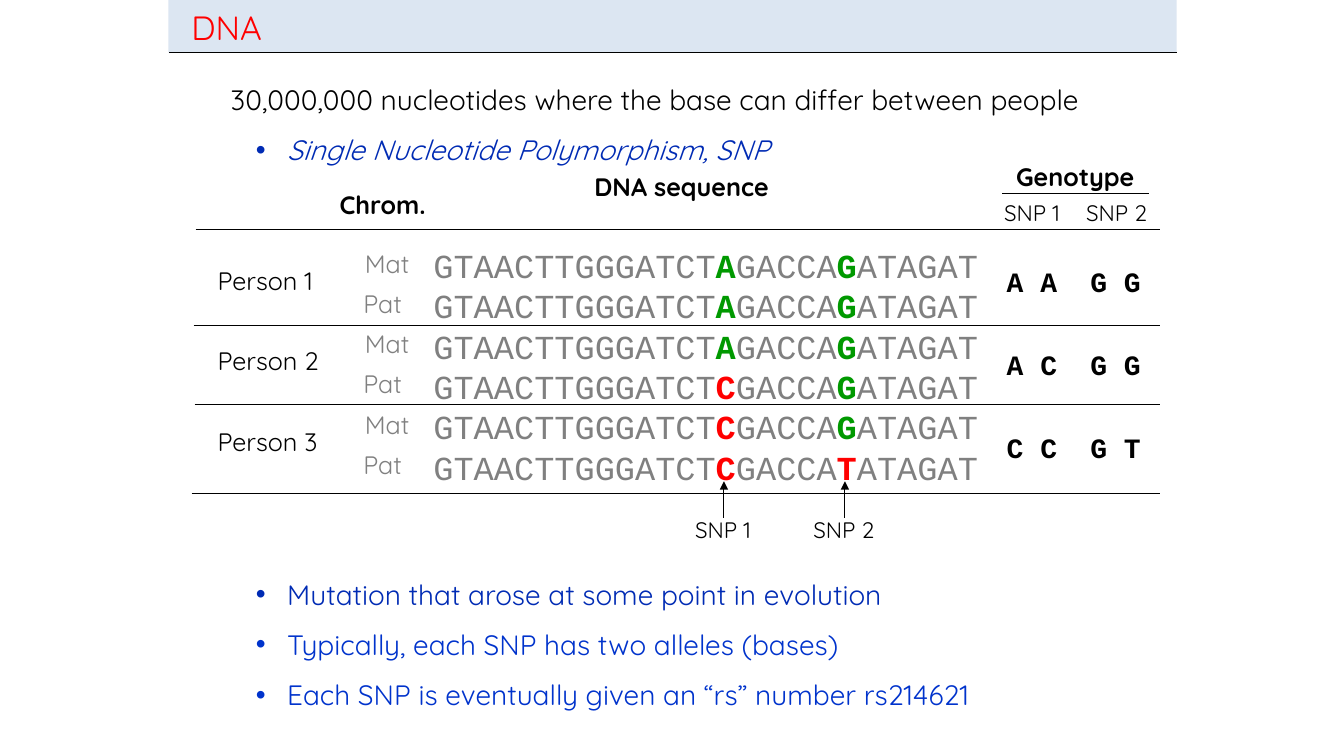
from lxml.etree import SubElement
from pptx import Presentation
from pptx.dml.color import RGBColor
from pptx.enum.shapes import MSO_CONNECTOR as Connector, MSO_SHAPE as Preset
from pptx.enum.text import MSO_AUTO_SIZE as AutoSize, PP_ALIGN as Align
from pptx.oxml.ns import qn
from pptx.util import Inches, Pt

BLACK = RGBColor(0x00, 0x00, 0x00)
GRAY = RGBColor(0x80, 0x80, 0x80)
RED = RGBColor(0xFF, 0x00, 0x00)
GREEN = RGBColor(0x00, 0x99, 0x00)
NAVY = RGBColor(0x00, 0x2B, 0xB4)
BLUE = RGBColor(0x00, 0x33, 0xCC)
PALE_BLUE = RGBColor(0xDC, 0xE6, 0xF2)

COLUMNS, ROWS = 133.3, 75
BODY_FONT, CODE_FONT = "Quicksand", "Courier New"

BODY = {"name": BODY_FONT, "size": Pt(20), "color": BLACK}
LABEL = {**BODY, "size": Pt(18)}
HEADING = {**LABEL, "bold": True}
CHROMOSOME = {**LABEL, "color": GRAY}
SNP_LABEL = {**BODY, "size": Pt(16)}
TITLE = {**BODY, "size": Pt(24), "color": RED}
GENOTYPE = {**BODY, "name": CODE_FONT, "bold": True}
BASES = {"name": CODE_FONT, "size": Pt(24), "color": GRAY}

SNP_NAMES = ("SNP 1", "SNP 2")
PEOPLE = {"Person 1": ("AA", "GG"), "Person 2": ("AC", "GG"), "Person 3": ("CC", "GT")}
COMMON_ALLELES = "AG"


class GridSlide:
    def __init__(self, presentation):
        self.slide = presentation.slides.add_slide(presentation.slide_layouts[6])
        self.column = presentation.slide_width / COLUMNS
        self.row = presentation.slide_height / ROWS

    def place(self, left, top, width, height):
        return [round(length * unit) for length, unit in
                zip((left, top, width, height), (self.column, self.row) * 2)]

    def band(self, left, top, width, height, color):
        shape = self.slide.shapes.add_shape(Preset.RECTANGLE, *self.place(left, top, width, height))
        shape.shadow.inherit = False
        shape.fill.solid()
        shape.fill.fore_color.rgb = color
        shape.line.fill.background()

    def line(self, start_column, start_row, end_column, end_row, arrow=False):
        ends = self.place(start_column, start_row, end_column, end_row)
        connector = self.slide.shapes.add_connector(Connector.STRAIGHT, *ends)
        connector.line.color.rgb = BLACK
        connector.line.width = Pt(0.75)
        if arrow:
            SubElement(connector.line._get_or_add_ln(), qn("a:tailEnd"), type="triangle")
        SubElement(connector._element.spPr, qn("a:effectLst"))

    def text(self, left, top, width, height, paragraphs, align=Align.LEFT, spacing=None):
        shape = self.slide.shapes.add_textbox(*self.place(left, top, width, height))
        frame = shape.text_frame
        frame.word_wrap = True
        frame.auto_size = AutoSize.SHAPE_TO_FIT_TEXT
        for index, runs in enumerate(paragraphs):
            paragraph = frame.add_paragraph() if index else frame.paragraphs[0]
            paragraph.alignment = align
            paragraph.line_spacing = spacing
            for words, style in runs:
                self.run(paragraph, words, style)
        return frame

    def run(self, paragraph, words, style):
        run = paragraph.add_run()
        run.text = words
        for name, value in style.items():
            if name == "color":
                run.font.color.rgb = value
            else:
                setattr(run.font, name, value)

    def label(self, left, top, width, height, words, style, align=Align.CENTER):
        self.text(left, top, width, height, [[(words, style)]], align)

    def bullet(self, paragraph):
        paragraph.level = 1
        properties = paragraph._p.get_or_add_pPr()
        properties.set("marL", str(Inches(0.56)))
        properties.set("indent", str(Inches(-0.31)))
        SubElement(properties, qn("a:buFont"), typeface="Arial")
        SubElement(properties, qn("a:buChar"), char="•")


def sequence(alleles):
    first, second = [
        (allele, {**BASES, "bold": True, "color": GREEN if allele == common else RED})
        for allele, common in zip(alleles, COMMON_ALLELES)]
    return [("GTAACTTGGGATCT", BASES), first, ("GACCA", BASES), second, ("ATAGAT", BASES)]


def add_statements(page):
    frame = page.text(21.9, 6, 97.2, 10.5, [
        [("30,000,000 nucleotides where the base can differ between people", BODY)],
        [("Single Nucleotide Polymorphism, SNP", {**BODY, "color": NAVY, "italic": True})],
    ], spacing=1.5)
    page.bullet(frame.paragraphs[1])
    facts = (("Mutation that arose at some point in evolution", NAVY),
             ("Typically, each SNP has two alleles (bases)", BLUE),
             ("Each SNP is eventually given an “rs” number rs214621", BLUE))
    frame = page.text(21.9, 55.1, 83.3, 15.9,
                      [[(words, {**BODY, "color": color})] for words, color in facts],
                      spacing=1.5)
    for paragraph in frame.paragraphs:
        page.bullet(paragraph)


def add_headings(page):
    page.label(27.7, 18.3, 20.5, 4, "Chrom.", HEADING)
    page.label(56.9, 16.5, 21.4, 7.1, "DNA sequence", HEADING)
    page.label(98, 15.5, 17.3, 4, "Genotype", HEADING)
    page.line(99.4, 19.2, 114, 19.2)
    for index, name in enumerate(SNP_NAMES):
        page.label(93.7 + 8.4 * index, 19.25, 17.3, 3.7, name, SNP_LABEL)
        page.label(66.2 + 12 * index, 50.7, 11, 3.7, name, SNP_LABEL)
        arrow = 71.8 + 12 * index
        page.line(arrow, 51.35, arrow, 47.75, arrow=True)


def add_people(page):
    page.text(42, 23.8, 59.1, 25.2, [
        sequence(alleles) for genotypes in PEOPLE.values() for alleles in zip(*genotypes)])
    for index, (person, genotypes) in enumerate(PEOPLE.items()):
        page.label(20.6, 25.8 + 8 * index, 13.4, 4, person, LABEL, Align.LEFT)
        for parent, (name, width) in enumerate((("Mat", 7.2), ("Pat", 6.3))):
            top = 24.1 + 4 * (2 * index + parent)
            page.label(34.8, top, width, 4, name, CHROMOSOME)
        for snp, genotype in enumerate(genotypes):
            page.label(98 + 8.3 * snp, 25.8 + 8.2 * index, 8.7, 4.4,
                       " ".join(genotype), GENOTYPE)
    for start, row in ((19.4, 22.8), (19.2, 32.3), (19.3, 40.1), (19, 49)):
        page.line(start, row, 115.1, row)


def main():
    presentation = Presentation()
    presentation.slide_width = Inches(13.33)
    presentation.slide_height = Inches(7.5)
    page = GridSlide(presentation)
    page.band(16.7, 0, 100, 5.2, PALE_BLUE)
    page.line(16.8, 5.2, 116.7, 5.2)
    page.label(18, 0.2, 93.5, 5, "DNA", TITLE, Align.LEFT)
    add_statements(page)
    add_headings(page)
    add_people(page)
    presentation.save("out.pptx")


if __name__ == "__main__":
    main()
